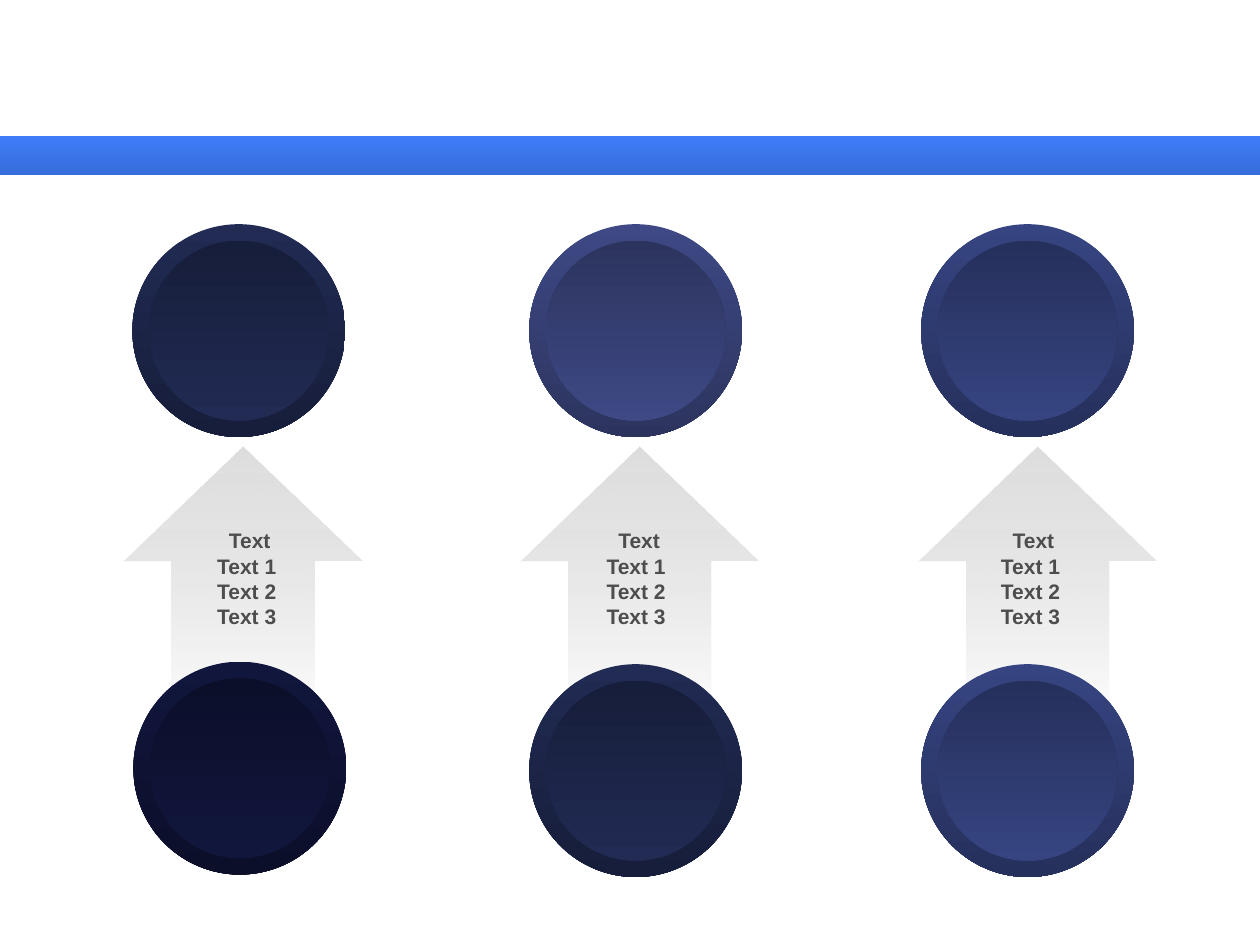
from dataclasses import dataclass

from lxml.etree import SubElement
from pptx import Presentation
from pptx.dml.color import RGBColor
from pptx.enum.shapes import MSO_SHAPE
from pptx.enum.text import PP_ALIGN
from pptx.oxml.ns import qn
from pptx.util import Cm, Pt

BAND_BLUE = RGBColor(0x3E, 0x7C, 0xF8)
MIDNIGHT = RGBColor(0x11, 0x16, 0x3C)
NAVY = RGBColor(0x21, 0x2B, 0x53)
INDIGO = RGBColor(0x3E, 0x49, 0x85)
ROYAL = RGBColor(0x36, 0x44, 0x81)
ARROW_TAIL = RGBColor(0xC9, 0xC9, 0xC9)
ARROW_TIP = RGBColor(0xDD, 0xDD, 0xDD)
TEXT_GREY = RGBColor(0x4D, 0x4D, 0x4D)

SLIDE_WIDTH, SLIDE_HEIGHT = 25.4, 19.05
DISC_SIZE, RIM_WIDTH = 4.29, 0.33
DARK_SHADE = 46


@dataclass(frozen=True)
class Stop:
    """One gradient end; shade and alpha are percentages."""
    color: RGBColor
    shade: int = 100
    alpha: int = 100


@dataclass(frozen=True)
class Disc:
    left: float
    top: float
    color: RGBColor


@dataclass(frozen=True)
class Column:
    arrow_left: float
    label_left: float
    upper: Disc
    lower: Disc


COLUMNS = [
    Column(2.13, 3.3, Disc(2.67, 4.52, NAVY), Disc(2.69, 13.34, MIDNIGHT)),
    Column(10.13, 11.15, Disc(10.67, 4.52, INDIGO), Disc(10.67, 13.39, NAVY)),
    Column(18.14, 19.1, Disc(18.57, 4.52, ROYAL), Disc(18.57, 13.39, ROYAL)),
]


def add_gradient_shape(slide, kind: MSO_SHAPE, left: float, top: float,
                       width: float, height: float, start: Stop, end: Stop,
                       angle: int = 90):
    shape = slide.shapes.add_shape(kind, Cm(left), Cm(top), Cm(width), Cm(height))
    shape.shadow.inherit = False
    shape.line.fill.background()
    shape.fill.gradient()
    gradient = shape.fill._xPr.find(qn("a:gradFill"))
    for child in list(gradient):
        gradient.remove(child)
    gradient.set("rotWithShape", "1")
    stops = SubElement(gradient, qn("a:gsLst"))
    for position, stop in ((0, start), (100, end)):
        gs = SubElement(stops, qn("a:gs"), pos=str(position * 1000))
        color = SubElement(gs, qn("a:srgbClr"), val=str(stop.color))
        for tag, percent in (("a:shade", stop.shade), ("a:alpha", stop.alpha)):
            if percent < 100:
                SubElement(color, qn(tag), val=str(percent * 1000))
    SubElement(gradient, qn("a:lin"), ang=str(angle * 60000), scaled="1")
    return shape


def add_disc(slide, disc: Disc) -> None:
    """Draw a rim and a face whose gradients run in opposite directions."""
    light, dark = Stop(disc.color), Stop(disc.color, shade=DARK_SHADE)
    for inset, start, end in ((0, light, dark), (RIM_WIDTH, dark, light)):
        size = DISC_SIZE - 2 * inset
        add_gradient_shape(slide, MSO_SHAPE.OVAL, disc.left + inset,
                           disc.top + inset, size, size, start, end)


def add_arrow(slide, left: float) -> None:
    arrow = add_gradient_shape(slide, MSO_SHAPE.RIGHT_ARROW, left, 9.37, 5.54, 4.8,
                               Stop(ARROW_TAIL, alpha=0), Stop(ARROW_TIP), angle=0)
    arrow.rotation = 270
    arrow.adjustments[0] = 0.598
    arrow.adjustments[1] = 0.48


def write_run(paragraph, text: str, *, bold: bool = True, size: int = 12,
              font: str = "Arial", color: RGBColor = TEXT_GREY) -> None:
    run = paragraph.add_run()
    run.text = text
    run.font.name = font
    run.font.size = Pt(size)
    run.font.bold = bold
    run.font.color.rgb = color


def add_label(slide, left: float) -> None:
    frame = slide.shapes.add_textbox(Cm(left), Cm(10.52), Cm(3.35), Cm(2.29)).text_frame
    frame.word_wrap = True
    heading = frame.paragraphs[0]
    heading.alignment = PP_ALIGN.CENTER
    write_run(heading, " ", bold=False)
    write_run(heading, "Text")
    for line in ("Text 1", "Text 2", "Text 3"):
        paragraph = frame.add_paragraph()
        paragraph.alignment = PP_ALIGN.CENTER
        write_run(paragraph, line)


def main() -> None:
    deck = Presentation()
    deck.slide_width, deck.slide_height = Cm(SLIDE_WIDTH), Cm(SLIDE_HEIGHT)
    slide = deck.slides.add_slide(deck.slide_layouts[6])

    add_gradient_shape(slide, MSO_SHAPE.RECTANGLE, 0, 2.74, SLIDE_WIDTH, 0.78,
                       Stop(BAND_BLUE), Stop(BAND_BLUE, shade=76))
    for column in COLUMNS:
        add_arrow(slide, column.arrow_left)
        add_disc(slide, column.upper)
        add_disc(slide, column.lower)
        add_label(slide, column.label_left)

    deck.save("out.pptx")


if __name__ == "__main__":
    main()
